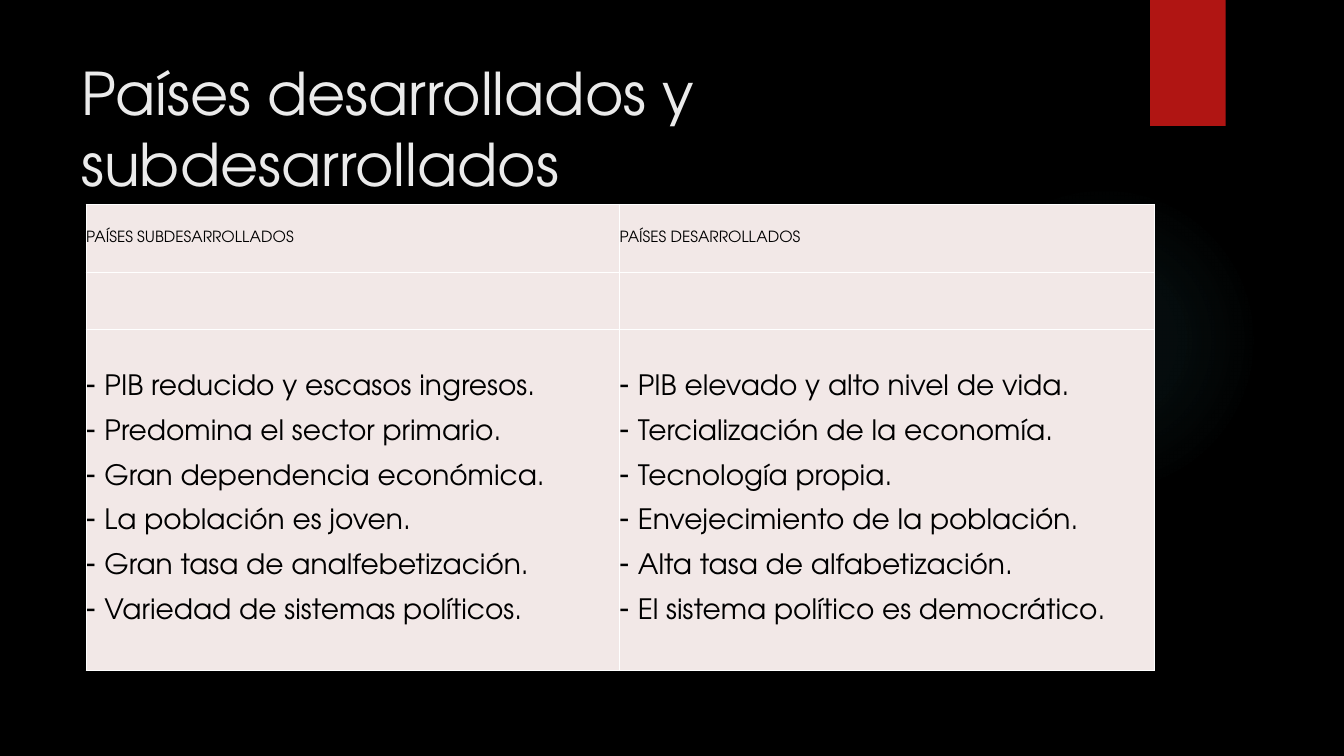
from pptx import Presentation
from pptx.dml.color import RGBColor
from pptx.enum.shapes import MSO_SHAPE as Shape
from pptx.enum.text import MSO_ANCHOR as Anchor, PP_ALIGN as Align
from pptx.oxml import parse_xml
from pptx.oxml.ns import nsdecls, qn
from pptx.util import Pt

FONT = "TeX Gyre Adventor"
BLACK = RGBColor(0x00, 0x00, 0x00)
WHITE = RGBColor(0xFF, 0xFF, 0xFF)
RED = RGBColor(0xB0, 0x15, 0x13)
TEAL = RGBColor(0x50, 0xB9, 0xC1)
LIGHT = RGBColor(0xEB, 0xEB, 0xEB)
BLUSH = RGBColor(0xF2, 0xE8, 0xE7)

COUNTRIES = {
    "PAÍSES SUBDESARROLLADOS": [
        "PIB reducido y escasos ingresos.",
        "Predomina el sector primario.",
        "Gran dependencia económica.",
        "La población es joven.",
        "Gran tasa de analfebetización.",
        "Variedad de sistemas políticos.",
    ],
    "PAÍSES DESARROLLADOS": [
        "PIB elevado y alto nivel de vida.",
        "Tercialización de la economía.",
        "Tecnología propia.",
        "Envejecimiento de la población.",
        "Alta tasa de alfabetización.",
        "El sistema político es democrático.",
    ],
}


def format_para(para, size, color, align):
    para.alignment = align
    for span in para.runs:
        span.font.name = FONT
        span.font.size = Pt(size)
        span.font.color.rgb = color


def add_plain_shape(page, kind, left, top, width, height):
    shape = page.shapes.add_shape(kind, Pt(left), Pt(top), Pt(width), Pt(height))
    shape.shadow.inherit = False
    shape.line.fill.background()
    return shape


def add_glow(page, left, top, size):
    glow = add_plain_shape(page, Shape.OVAL, left, top, size, size)
    glow.fill.background()
    stops = "".join(
        f'<a:gs pos="{position * 1000}"><a:srgbClr val="{TEAL}">'
        f'<a:alpha val="{alpha * 1000}"/></a:srgbClr></a:gs>'
        for position, alpha in [(0, 7), (36, 6), (69, 0), (100, 0)]
    )
    gradient = parse_xml(
        f'<a:gradFill {nsdecls("a")}><a:gsLst>{stops}</a:gsLst><a:path path="circle">'
        '<a:fillToRect l="50000" t="50000" r="50000" b="50000"/></a:path></a:gradFill>'
    )
    properties = glow.element.spPr
    properties.replace(properties.find(qn("a:noFill")), gradient)


def add_ribbon(page, left, top, width, height):
    ribbon = add_plain_shape(page, Shape.RECTANGLE, left, top, width, height)
    ribbon.fill.solid()
    ribbon.fill.fore_color.rgb = RED


def add_title(page, left, top, width, height):
    title = page.shapes.title
    title.left, title.top = Pt(left), Pt(top)
    title.width, title.height = Pt(width), Pt(height)
    frame = title.text_frame
    frame.text = "Países desarrollados y subdesarrollados"
    frame.word_wrap = True
    frame.vertical_anchor = Anchor.MIDDLE
    format_para(frame.paragraphs[0], 42, LIGHT, Align.LEFT)


def style_cell(cell):
    cell.fill.solid()
    cell.fill.fore_color.rgb = BLUSH
    cell.vertical_anchor = Anchor.MIDDLE
    cell.margin_left = cell.margin_right = cell.margin_top = cell.margin_bottom = 0
    properties = cell._tc.get_or_add_tcPr()
    for index, side in enumerate(["lnL", "lnR", "lnT", "lnB"]):
        border = parse_xml(
            f'<a:{side} {nsdecls("a")} w="12700"><a:solidFill>'
            f'<a:srgbClr val="{WHITE}"/></a:solidFill></a:{side}>'
        )
        properties.insert(index, border)


def fill_list(cell, items):
    frame = cell.text_frame
    for index, item in enumerate(items):
        para = frame.add_paragraph() if index else frame.paragraphs[0]
        para.text = item
        properties = para._p.get_or_add_pPr()
        properties.set("marL", str(Pt(13)))
        properties.set("indent", str(-Pt(13)))
        properties.append(parse_xml(f'<a:buChar {nsdecls("a")} char="-"/>'))
        if index:
            para.space_before = Pt(13.3)
        format_para(para, 20, BLACK, Align.JUSTIFY)


def add_comparison(page, left, top, widths, heights):
    table = page.shapes.add_table(
        len(heights), len(widths), Pt(left), Pt(top), Pt(sum(widths)), Pt(sum(heights))
    ).table
    table.first_row = table.horz_banding = False
    for column, width in zip(table.columns, widths):
        column.width = Pt(width)
    for row, height in zip(table.rows, heights):
        row.height = Pt(height)
    for cell in table.iter_cells():
        style_cell(cell)
    for index, (heading, items) in enumerate(COUNTRIES.items()):
        header = table.cell(0, index)
        header.text = heading
        format_para(header.text_frame.paragraphs[0], 11, BLACK, Align.JUSTIFY)
        fill_list(table.cell(2, index), items)


def main():
    deck = Presentation()
    deck.slide_width, deck.slide_height = Pt(960), Pt(540)
    page = deck.slides.add_slide(deck.slide_layouts[5])
    page.background.fill.solid()
    page.background.fill.fore_color.rgb = BLACK
    add_glow(page, 677.5, 131.8, 221.8)
    add_ribbon(page, 821.5, 0, 54, 90)
    add_title(page, 51, 36, 741, 110)
    add_comparison(page, 61.6, 146, [381, 382.3], [48.6, 40.7, 243.4])
    deck.save("out.pptx")


if __name__ == "__main__":
    main()
